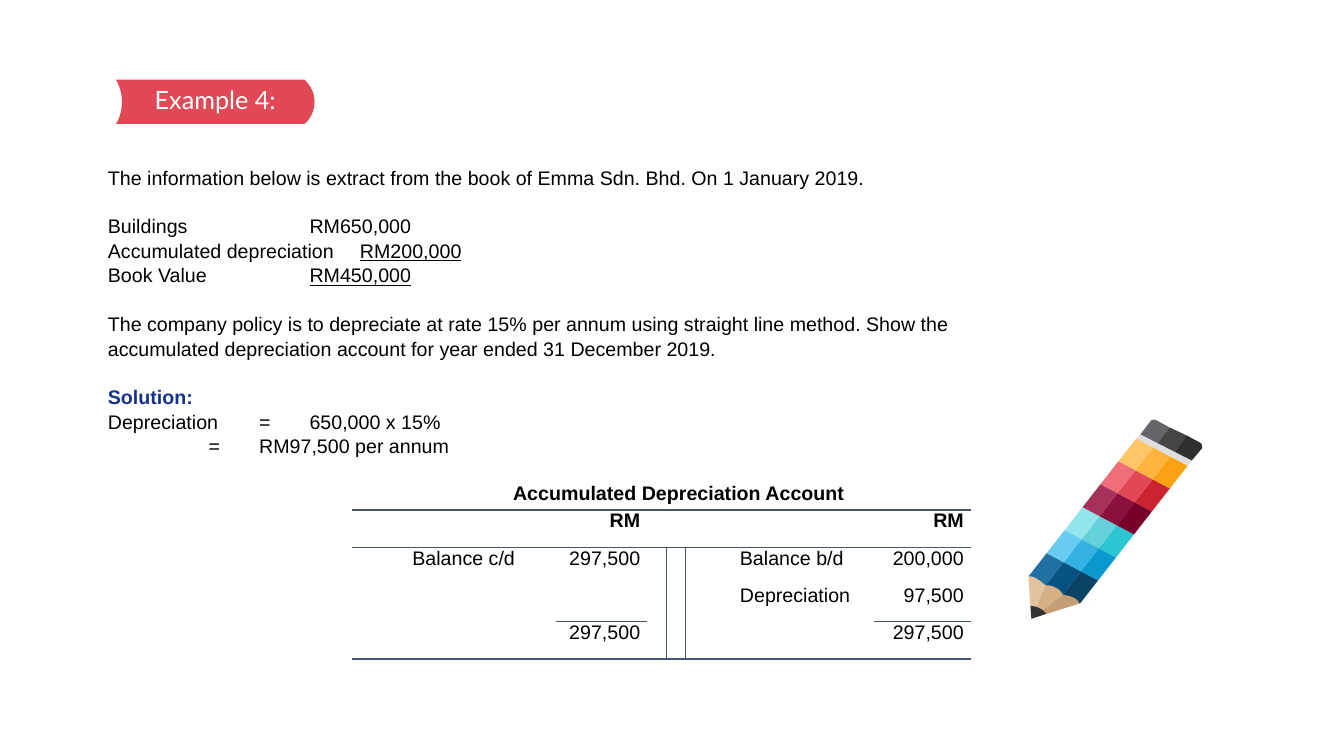
"""Build the Example 4 slide on an accumulated depreciation account."""
from lxml import etree
from pptx import Presentation
from pptx.dml.color import RGBColor
from pptx.enum import shapes, text
from pptx.oxml import ns
from pptx.util import Inches, Pt

COLOURS = {
    "white": "FFFFFF", "black": "000000", "red": "E24956", "navy": "16328C",
    "rule": "445469", "band": "DDDDDD", "lead": "333333",
    "wood light": "E3C29F", "wood mid": "D6AF85", "wood dark": "C49E74",
    "rubber light": "656669", "rubber mid": "464647", "rubber dark": "2F2F30",
}
BARREL = [
    ("FFC569", "FFB53D", "FAA213"),
    ("F06E7A", "E24956", "CC2331"),
    ("A6325C", "8C103D", "78012C"),
    ("91E5EB", "64D1DA", "2CC6D2"),
    ("68CBF2", "34B2E3", "0A98CF"),
    ("2070A1", "065280", "0A4366"),
]


def trace(canvas, steps, fill):
    """Draw a filled outline; a step of two numbers is a line, of six a curve."""
    points = [steps[0]]
    for step in steps[1:]:
        if len(step) == 2:
            points.append(step)
            continue
        knots = [points[-1], step[:2], step[2:4], step[4:]]
        for i in range(1, 13):
            t = i / 12
            weights = ((1 - t) ** 3, 3 * t * (1 - t) ** 2, 3 * t * t * (1 - t), t ** 3)
            points.append([sum(w * knot[axis] for w, knot in zip(weights, knots)) for axis in (0, 1)])
    corners = [(Inches(x), Inches(y)) for x, y in points]
    builder = canvas.build_freeform(*corners[0])
    builder.add_line_segments(corners[1:], close=True)
    outline = builder.convert_to_shape()
    outline.shadow.inherit = False
    outline.fill.solid()
    outline.fill.fore_color.rgb = RGBColor.from_string(fill)
    outline.line.fill.background()
    return outline


def write(para, words, colour="black", **changes):
    """Add a formatted run to a paragraph."""
    span = para.add_run()
    span.text = words
    for name, value in ({"name": "Arial", "size": Pt(14), "bold": False} | changes).items():
        setattr(span.font, name, value)
    span.font.color.rgb = RGBColor.from_string(COLOURS[colour])


deck = Presentation()
deck.slide_width, deck.slide_height = Inches(13.33), Inches(7.5)
page = deck.slides.add_slide(deck.slide_layouts[1])
title, body = page.placeholders

banner = trace(page.shapes, [
    (3.12, 1.01), (3.12, 0.92, 3.08, 0.85, 3.02, 0.79), (1.15, 0.79),
    (1.19, 0.86, 1.21, 0.93, 1.21, 1.01), (1.21, 1.09, 1.19, 1.17, 1.15, 1.23),
    (3.02, 1.23), (3.08, 1.18, 3.12, 1.1, 3.12, 1.01),
], COLOURS["red"])
banner.element.addnext(title.element)

for box, place in ((title, (1.15, 0.79, 1.97, 0.44)), (body, (0.97, 1.58, 8.85, 2.93))):
    box.left, box.top, box.width, box.height = map(Inches, place)
    frame = box.text_frame
    frame_format = {
        "auto_size": text.MSO_AUTO_SIZE.NONE, "word_wrap": True,
        "vertical_anchor": text.MSO_ANCHOR.TOP,
        "margin_left": Inches(0.1), "margin_right": Inches(0.1),
        "margin_top": Inches(0.05), "margin_bottom": Inches(0.05),
    }
    for name, value in frame_format.items():
        setattr(frame, name, value)

heading = title.text_frame.paragraphs[0]
heading.alignment = text.PP_ALIGN.CENTER
write(heading, "Example 4:", "white", name="Lato", size=Pt(18))

underlined = {"underline": True}
bold = {"bold": True, "colour": "navy"}
statement = [
    (0, [("The information below is extract from the book of Emma Sdn. Bhd. On 1 January 2019.", {})]),
    (17, [("Buildings\t\t\tRM650,000", {})]),
    (0, [("Accumulated depreciation\t", {}), ("RM200,000", underlined)]),
    (0, [("Book Value\t\t\t", {}), ("RM450,000", underlined)]),
    (17, [("The company policy is to depreciate at rate 15% per annum using straight line method. "
           "Show the accumulated depreciation account for year ended 31 December 2019.", {})]),
    (17, [("Solution:", bold)]),
    (0, [("Depreciation\t=\t650,000 x 15%", {})]),
    (0, [("\t\t=\tRM97,500 per annum", {})]),
]
for index, (gap, spans) in enumerate(statement):
    para = body.text_frame.add_paragraph() if index else body.text_frame.paragraphs[0]
    para_format = {"space_before": Pt(gap), "space_after": Pt(0), "line_spacing": 1.05,
                   "alignment": text.PP_ALIGN.LEFT}
    for name, value in para_format.items():
        setattr(para, name, value)
    for words, changes in spans:
        write(para, words, **changes)
    props = para._p.get_or_add_pPr()
    props.set("marL", "0")
    props.set("indent", "0")
    etree.SubElement(props, ns.qn("a:buNone"))
    stops = etree.SubElement(props, ns.qn("a:tabLst"))
    for inch in (1, 2, 3):
        etree.SubElement(stops, ns.qn("a:tab"), pos=str(Inches(inch)), algn="l")

caption = page.shapes.add_shape(
    shapes.MSO_SHAPE.RECTANGLE, *map(Inches, (4.99, 4.72, 3.59, 0.34)))
caption.shadow.inherit = False
caption.fill.solid()
caption.fill.fore_color.rgb = RGBColor.from_string(COLOURS["white"])
caption.line.fill.background()
caption.text_frame.word_wrap = True
caption.text_frame.vertical_anchor = text.MSO_ANCHOR.MIDDLE
caption_para = caption.text_frame.paragraphs[0]
caption_para.alignment = text.PP_ALIGN.LEFT
write(caption_para, "Accumulated Depreciation Account", bold=True)

entries = [
    ["", "", "RM", "", "", "", "", "RM"],
    ["", "Balance c/d", "297,500", "", "", "", "Balance b/d", "200,000"],
    ["", "", "", "", "", "", "Depreciation", "97,500"],
    ["", "", "297,500", "", "", "", "", "297,500"],
]
widths = [0.53, 1.49, 0.91, 0.19, 0.19, 0.47, 1.4, 0.96]
amounts = (2, 7)
account = page.shapes.add_table(
    len(entries), len(widths), Inches(3.49), Inches(5.06),
    Inches(sum(widths)), Inches(0.37 * len(entries))).table
account.first_row = account.horz_banding = False
for column, width in zip(account.columns, widths):
    column.width = Inches(width)
for r, entry in enumerate(entries):
    account.rows[r].height = Inches(0.37)
    for c, words in enumerate(entry):
        cell = account.cell(r, c)
        cell.margin_left = cell.margin_right = Inches(0.07)
        cell.margin_top = cell.margin_bottom = 0
        ruled = {f"a:ln{side}": r > 0 and edge in (4, 5) for side, edge in (("L", c), ("R", c + 1))}
        ruled |= {f"a:ln{side}": edge in (0, 1, 4) or (edge == 3 and c in amounts)
                  for side, edge in (("T", r), ("B", r + 1))}
        for tag, shown in ruled.items():
            line = etree.SubElement(cell._tc.get_or_add_tcPr(), ns.qn(tag), w=str(Pt(1)))
            paint = etree.SubElement(line, ns.qn("a:solidFill" if shown else "a:noFill"))
            if shown:
                etree.SubElement(paint, ns.qn("a:srgbClr"), val=COLOURS["rule"])
        cell.fill.solid()
        cell.fill.fore_color.rgb = RGBColor.from_string(COLOURS["white"])
        if words:
            para = cell.text_frame.paragraphs[0]
            para.alignment = text.PP_ALIGN.RIGHT if c in amounts else text.PP_ALIGN.LEFT
            write(para, words, bold=r == 0)
account.cell(0, 3).merge(account.cell(0, 4))

pencil = page.shapes.add_group_shape().shapes
for r, shades in enumerate(BARREL):
    for c, shade in enumerate(shades):
        facet = [(11.27 + 0.17 * (c + i) - 0.178 * (r + j), 4.35 + 0.09 * (c + i) + 0.228 * (r + j))
                 for i, j in ((0, 0), (1, 0), (1, 1), (0, 1))]
        trace(pencil, facet, shade)

parts = [
    ("rubber light", [(11.48, 4.4), (11.31, 4.31), (11.41, 4.18),
                      (11.42, 4.16, 11.45, 4.16, 11.47, 4.17), (11.6, 4.24)]),
    ("rubber mid", [(11.65, 4.49), (11.48, 4.4), (11.6, 4.24), (11.77, 4.32)]),
    ("rubber dark", [(11.82, 4.57), (11.65, 4.49), (11.77, 4.32), (11.9, 4.39),
                     (11.92, 4.4, 11.93, 4.43, 11.92, 4.45)]),
    ("wood dark", [(10.38, 6.09), (10.7, 5.99), (10.7, 5.99, 10.71, 5.96, 10.65, 5.93),
                   (10.61, 5.91, 10.54, 5.9, 10.54, 5.9), (10.34, 6.05)]),
    ("wood light", [(10.37, 5.81), (10.37, 5.81, 10.32, 5.76, 10.28, 5.74),
                    (10.23, 5.71, 10.2, 5.72, 10.2, 5.72), (10.22, 6.01), (10.28, 6.02)]),
    ("wood mid", [(10.28, 6.02), (10.34, 6.05), (10.54, 5.9),
                  (10.54, 5.9, 10.53, 5.86, 10.47, 5.83), (10.42, 5.8, 10.37, 5.81, 10.37, 5.81)]),
    ("lead", [(10.23, 6.14), (10.38, 6.09), (10.34, 6.05), (10.28, 6.02), (10.22, 6.01)]),
    ("band", [(11.82, 4.57), (11.31, 4.31), (11.27, 4.35), (11.78, 4.62)]),
]
for colour, steps in parts:
    trace(pencil, steps, COLOURS[colour])

deck.save("out.pptx")
